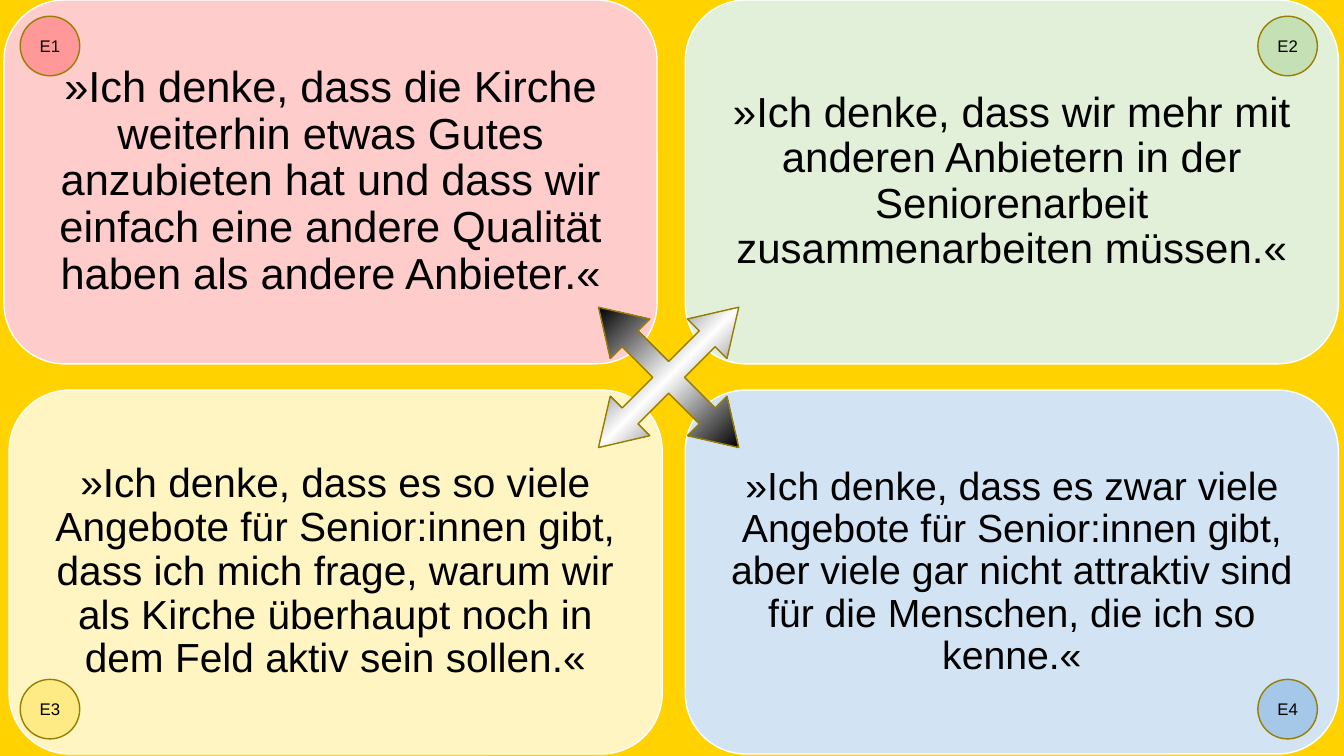
from lxml import etree
from pptx import Presentation
from pptx import util as u
from pptx.dml.color import RGBColor
from pptx.enum import shapes, text
from pptx.oxml import ns

COLORS = {
    "background": "FFD200", "text": "000000", "border": "FFFFFF", "outline": "977E00",
    "red": "FFCCCC", "green": "E2F0D9", "yellow": "FFF5C2", "blue": "D2E4F4",
    "dark red": "FF9999", "dark green": "C5E0B4",
    "dark yellow": "FFEB85", "dark blue": "A5C8E8",
}
CARD_WIDTH, CARD_HEIGHT = 16.46, 9.17
BADGE_SIZE = 1.5
BADGE_LEFT, BADGE_TOP = (0.51, 31.7), (0.41, 17.12)

# label, column, row, card left, card top, colour, font size, inset, quote
QUOTES = [
    ("E1", 0, 0, 0.1, 0, "red", 31, 0.33,
     "»Ich denke, dass die Kirche weiterhin etwas Gutes anzubieten hat und dass wir "
     "einfach eine andere Qualität haben als andere Anbieter.«"),
    ("E2", 1, 0, 17.27, 0, "green", 30, 0.3,
     "»Ich denke, dass wir mehr mit anderen Anbietern in der Seniorenarbeit "
     "zusammenarbeiten müssen.«"),
    ("E3", 0, 1, 0.23, 9.83, "yellow", 29, 0.3,
     "»Ich denke, dass es so viele Angebote für Senior:innen gibt, dass ich mich frage, "
     "warum wir als Kirche überhaupt noch in dem Feld aktiv sein sollen.«"),
    ("E4", 1, 1, 17.27, 9.83, "blue", 28, 0.3,
     "»Ich denke, dass es zwar viele Angebote für Senior:innen gibt, aber viele gar "
     "nicht attraktiv sind für die Menschen, die ich so kenne.«"),
]


def color(name):
    return RGBColor.from_string(COLORS[name])


def add_labelled_shape(parent, kind, box, fill, line, label, size, inset, spacing):
    """Add a filled, outlined shape with one centred paragraph; box and inset in cm."""
    shape = parent.add_shape(kind, *[u.Cm(length) for length in box])
    shape.shadow.inherit = False
    shape.fill.solid()
    shape.fill.fore_color.rgb = color(fill)
    shape.line.color.rgb = color(line)
    shape.line.width = u.Pt(1)
    frame = shape.text_frame
    frame_format = {"word_wrap": True, "vertical_anchor": text.MSO_ANCHOR.MIDDLE}
    for side in ("left", "top", "right", "bottom"):
        frame_format[f"margin_{side}"] = u.Cm(inset)
    for name, value in frame_format.items():
        setattr(frame, name, value)
    paragraph = frame.paragraphs[0]
    paragraph.text = label
    paragraph.alignment = text.PP_ALIGN.CENTER
    paragraph.line_spacing = spacing
    for name, value in {"name": "Arial", "size": u.Pt(size)}.items():
        setattr(paragraph.font, name, value)
    paragraph.font.color.rgb = color("text")


presentation = Presentation()
presentation.slide_width = u.Cm(33.87)
presentation.slide_height = u.Cm(19.05)
slide = presentation.slides.add_slide(presentation.slide_layouts[6])
slide.background.fill.solid()
slide.background.fill.fore_color.rgb = color("background")

# Quote cards
cards = slide.shapes.add_group_shape()
for label, column, row, left, top, fill, size, inset, quote in QUOTES:
    add_labelled_shape(cards.shapes, shapes.MSO_SHAPE.ROUNDED_RECTANGLE,
                       (left, top, CARD_WIDTH, CARD_HEIGHT),
                       fill, "border", quote, size, inset, 0.9)

# Crossed arrows in the middle
arrows = slide.shapes.add_shape(shapes.MSO_SHAPE.QUAD_ARROW,
                                u.Cm(14.35), u.Cm(7.01), u.Cm(5), u.Cm(5))
arrows.rotation = 45
arrows.shadow.inherit = False
for index, value in enumerate((0.113, 0.141, 0.225)):
    arrows.adjustments[index] = value
arrows.line.color.rgb = color("outline")
arrows.line.width = u.Pt(1)

gradient = etree.Element(ns.qn("a:gradFill"), rotWithShape="1")
stops = etree.SubElement(gradient, ns.qn("a:gsLst"))
for percent, name in ((0, "text"), (25, "text"), (50, "border"), (75, "text"), (100, "text")):
    stop = etree.SubElement(stops, ns.qn("a:gs"), pos=str(percent * 1000))
    etree.SubElement(stop, ns.qn("a:srgbClr"), val=COLORS[name])
circle = etree.SubElement(gradient, ns.qn("a:path"), path="circle")
etree.SubElement(circle, ns.qn("a:fillToRect"), l="100000", t="100000")
arrows.element.spPr.find(ns.qn("a:prstGeom")).addnext(gradient)

# Numbered badges in the outer corners
for label, column, row, left, top, fill, *rest in QUOTES:
    add_labelled_shape(slide.shapes, shapes.MSO_SHAPE.OVAL,
                       (BADGE_LEFT[column], BADGE_TOP[row], BADGE_SIZE, BADGE_SIZE),
                       f"dark {fill}", "outline", label, 12, 0, 1.0)

presentation.save("out.pptx")
